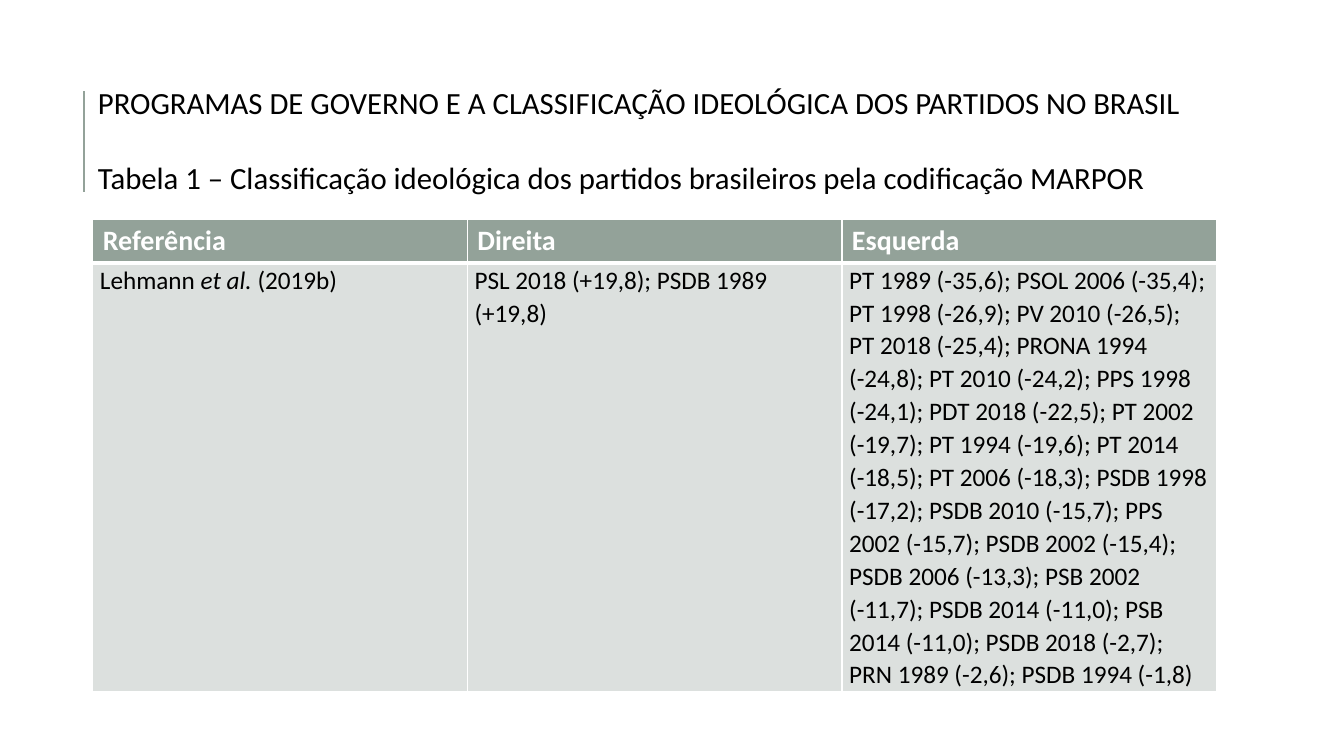
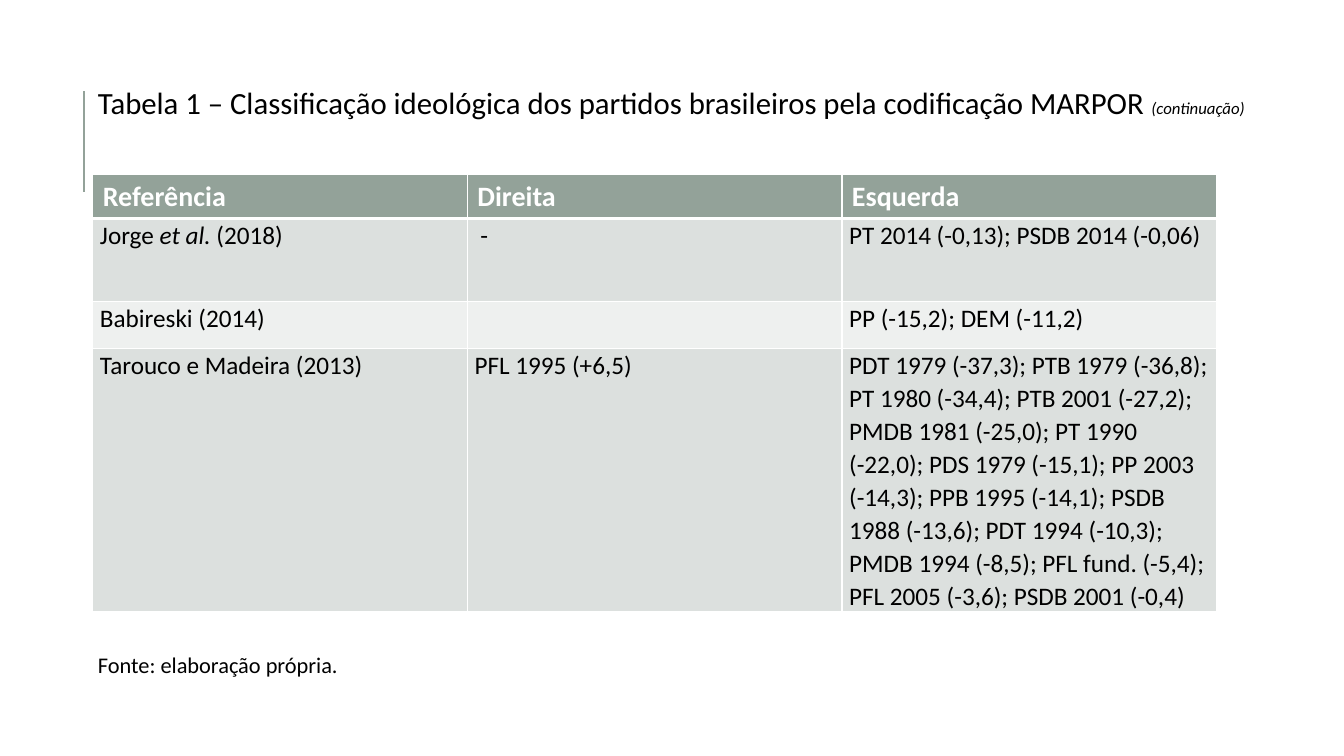
from lxml import etree
from pptx import Presentation
from pptx import util as u
from pptx.dml.color import RGBColor
from pptx.enum import shapes, text
from pptx.oxml.ns import qn

FONT = "Calibri"
GREEN, BAND, LIGHT_BAND = "93A299", "DCE0DE", "EEF0EF"
WHITE, BLACK = "FFFFFF", "000000"
LEFT, TEXT_WIDTH = 2.34, 29.97
COLUMN_WIDTH, HEADER_HEIGHT = 9.44, 1.1
HEADERS = ["Referência", "Direita", "Esquerda"]
CAPTION = "Tabela 1 – Classificação ideológica dos partidos brasileiros pela codificação MARPOR"


def color(value):
    return RGBColor.from_string(value)


def assign(target, values):
    for name, value in values.items():
        setattr(target, name, value)


def italic(words, **font):
    return words, {"italic": True, **font}


class Deck:
    """Holds the presentation, its style and the current slide."""

    title_paragraph = {"line_spacing": 1.5, "space_before": u.Pt(12), "space_after": u.Pt(2)}
    body_paragraph = {"line_spacing": 1.07, "space_after": u.Pt(8)}
    text_margins = dict.fromkeys(
        ["margin_left", "margin_top", "margin_right", "margin_bottom"], u.Cm(0.13))
    header_margins = {"margin_left": u.Cm(0.25), "margin_right": u.Cm(0.25),
                      "margin_top": u.Cm(0.13), "margin_bottom": u.Cm(0.13)}
    body_margins = {"margin_left": u.Cm(0.18), "margin_right": u.Cm(0.18),
                    "margin_top": 0, "margin_bottom": 0}

    def __init__(self):
        self.presentation = Presentation()
        assign(self.presentation, {"slide_width": u.Cm(33.87), "slide_height": u.Cm(19.05)})

    def new_slide(self):
        self.slide = self.presentation.slides.add_slide(self.presentation.slide_layouts[6])
        self.rule(2.11, 2.29, 4.83)

    def rule(self, x, top, bottom):
        line = self.slide.shapes.add_connector(
            shapes.MSO_CONNECTOR.STRAIGHT, u.Cm(x), u.Cm(bottom), u.Cm(x), u.Cm(top))
        line.line.color.rgb = color(GREEN)
        line.line.width = u.Pt(1.5)
        etree.SubElement(line._element.spPr, qn("a:effectLst"))

    def fill_paragraph(self, paragraph, content, layout, **font):
        """Content is a string, or a list of strings and (string, font values)."""
        assign(paragraph, layout)
        for part in [content] if isinstance(content, str) else content:
            words, extra = (part, {}) if isinstance(part, str) else part
            run = paragraph.add_run()
            run.text = words
            values = {"name": FONT, "color": BLACK, **font, **extra}
            run.font.color.rgb = color(values.pop("color"))
            assign(run.font, values)

    def text_box(self, top, height, paragraphs, size):
        box = self.slide.shapes.add_textbox(
            u.Cm(LEFT), u.Cm(top), u.Cm(TEXT_WIDTH), u.Cm(height))
        frame = box.text_frame
        assign(frame, {"word_wrap": True, **self.text_margins})
        for index, content in enumerate(paragraphs):
            paragraph = frame.add_paragraph() if index else frame.paragraphs[0]
            self.fill_paragraph(paragraph, content, self.title_paragraph, size=u.Pt(size))

    def title(self, *paragraphs):
        self.text_box(1.52, 3.5, paragraphs, 22)

    def source_note(self, words):
        self.text_box(15.94, 1.3, [words], 16)

    def borders(self, cell, top, bottom):
        properties = cell._tc.get_or_add_tcPr()
        widths = {"lnL": 1, "lnR": 1, "lnT": top, "lnB": bottom}
        for index, (side, width) in enumerate(widths.items()):
            line = etree.Element(qn(f"a:{side}"), w=str(u.Pt(width)))
            fill = etree.SubElement(line, qn("a:solidFill"))
            etree.SubElement(fill, qn("a:srgbClr"), val=WHITE)
            properties.insert(index, line)

    def table(self, top, rows, heights):
        heights = [HEADER_HEIGHT, *heights]
        table = self.slide.shapes.add_table(
            len(heights), len(HEADERS), u.Cm(LEFT), u.Cm(top),
            u.Cm(COLUMN_WIDTH * len(HEADERS)), u.Cm(sum(heights))).table
        table.horz_banding = False
        for column in table.columns:
            column.width = u.Cm(COLUMN_WIDTH)
        for r, (height, contents) in enumerate(zip(heights, [HEADERS, *rows])):
            table.rows[r].height = u.Cm(height)
            for c, content in enumerate(contents):
                self.cell(table.cell(r, c), r, content)

    def cell(self, cell, row, content):
        header = row == 0
        assign(cell, self.header_margins if header else self.body_margins)
        cell.vertical_anchor = text.MSO_ANCHOR.TOP
        cell.fill.solid()
        cell.fill.fore_color.rgb = color(GREEN if header else BAND if row % 2 else LIGHT_BAND)
        self.borders(cell, top=3 if row == 1 else 1, bottom=3 if header else 1)
        paragraph = cell.text_frame.paragraphs[0]
        if header:
            self.fill_paragraph(paragraph, content, {}, size=u.Pt(20), bold=True, color=WHITE)
        elif content:
            self.fill_paragraph(paragraph, content, self.body_paragraph,
                                size=u.Pt(18), bold=False)


def main():
    deck = Deck()

    # Table, first part
    deck.new_slide()
    deck.title("PROGRAMAS DE GOVERNO E A CLASSIFICAÇÃO IDEOLÓGICA DOS PARTIDOS NO BRASIL", CAPTION)
    deck.table(5.52, [
        [["Lehmann ", italic("et al."), " (2019b)"],
         "PSL 2018 (+19,8); PSDB 1989 (+19,8)",
         "PT 1989 (-35,6); PSOL 2006 (-35,4); PT 1998 (-26,9); PV 2010 (-26,5); "
         "PT 2018 (-25,4); PRONA 1994 (-24,8); PT 2010 (-24,2); PPS 1998 (-24,1); "
         "PDT 2018 (-22,5); PT 2002 (-19,7); PT 1994 (-19,6); PT 2014 (-18,5); "
         "PT 2006 (-18,3); PSDB 1998 (-17,2); PSDB 2010 (-15,7); PPS 2002 (-15,7); "
         "PSDB 2002 (-15,4); PSDB 2006 (-13,3); PSB 2002 (-11,7); PSDB 2014 (-11,0); "
         "PSB 2014 (-11,0); PSDB 2018 (-2,7); PRN 1989 (-2,6); PSDB 1994 (-1,8)"],
    ], [10.8])

    # Table, continued
    deck.new_slide()
    deck.title([CAPTION + " ", italic("(continuação)", size=u.Pt(12))])
    deck.table(4.4, [
        [["Jorge ", italic("et al. "), "(2018)"], " -", "PT 2014 (-0,13); PSDB 2014 (-0,06)"],
        ["Babireski (2014)", "", "PP (-15,2); DEM (-11,2)"],
        ["Tarouco e Madeira (2013)", "PFL 1995 (+6,5)",
         "PDT 1979 (-37,3); PTB 1979 (-36,8); PT 1980 (-34,4); PTB 2001 (-27,2); "
         "PMDB 1981 (-25,0); PT 1990 (-22,0); PDS 1979 (-15,1); PP 2003 (-14,3); "
         "PPB 1995 (-14,1); PSDB 1988 (-13,6); PDT 1994 (-10,3); PMDB 1994 (-8,5); "
         "PFL fund. (-5,4); PFL 2005 (-3,6); PSDB 2001 (-0,4)"],
    ], [2.08, 1.2, 6.62])
    deck.source_note("Fonte: elaboração própria.")

    deck.presentation.save("out.pptx")


if __name__ == "__main__":
    main()
